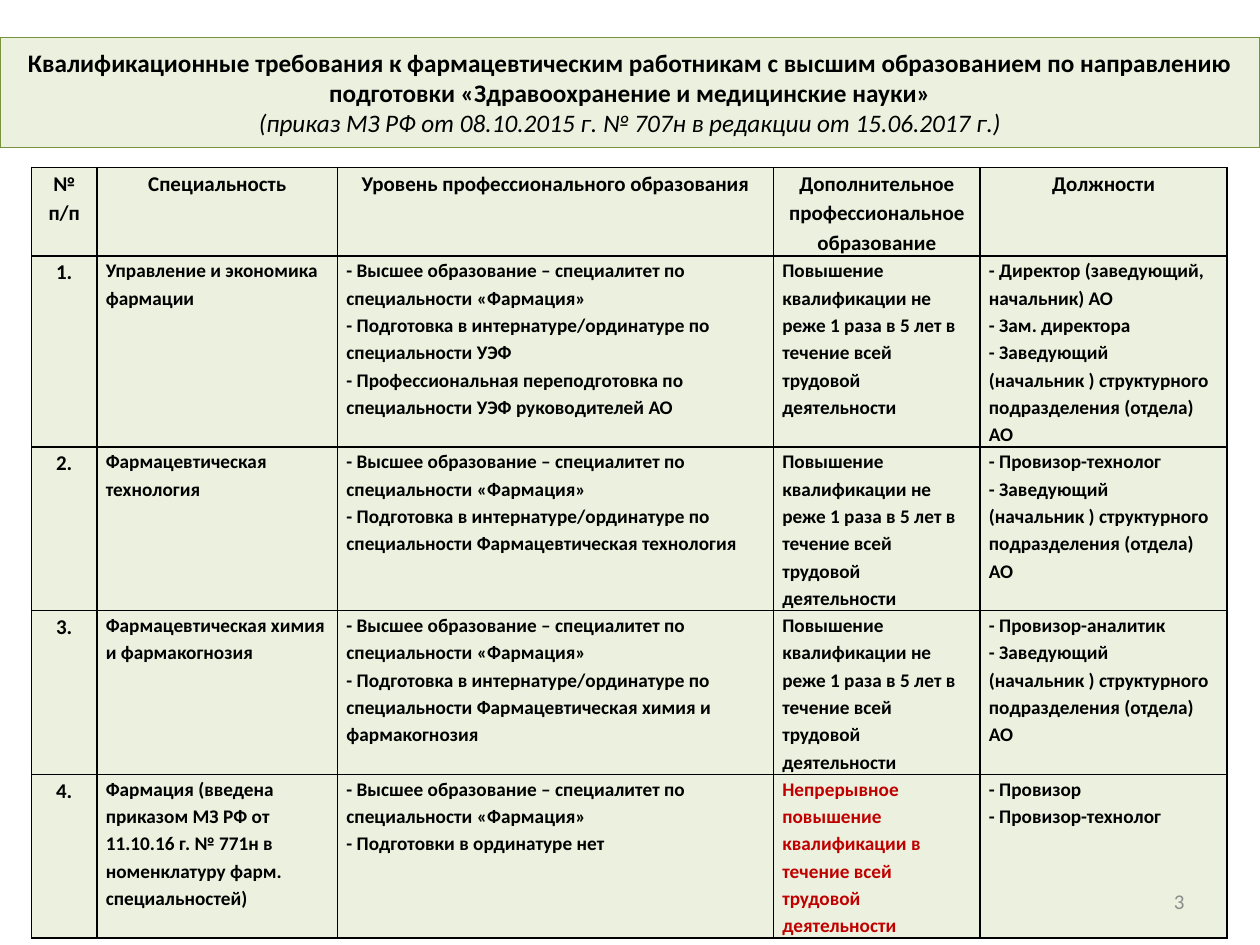
from dataclasses import dataclass

from lxml.etree import SubElement
from pptx import Presentation
from pptx.dml.color import RGBColor
from pptx.enum.shapes import MSO_SHAPE
from pptx.enum.text import MSO_ANCHOR, PP_ALIGN
from pptx.oxml.ns import qn
from pptx.util import Inches, Pt


@dataclass(frozen=True)
class Theme:
    font: str = "Calibri"
    panel: RGBColor = RGBColor(0xEB, 0xF1, 0xDE)
    outline: RGBColor = RGBColor(0x77, 0x93, 0x3C)
    text: RGBColor = RGBColor(0, 0, 0)
    accent: RGBColor = RGBColor(0xC0, 0, 0)
    muted: RGBColor = RGBColor(0x8C, 0x8C, 0x8C)
    title_size: float = 14.4
    header_size: float = 12
    body_size: float = 11


theme = Theme()


def add_run(paragraph, text, size, color=theme.text, bold=True, italic=False):
    run = paragraph.add_run()
    run.text = text
    run.font.name = theme.font
    run.font.size = Pt(size)
    run.font.color.rgb = color
    run.font.bold = bold
    run.font.italic = italic


def add_borders(cell):
    properties = cell._tc.get_or_add_tcPr()
    for position, side in enumerate(("lnL", "lnR", "lnT", "lnB")):
        line = properties.makeelement(qn(f"a:{side}"), {"w": str(Pt(1))})
        fill = SubElement(line, qn("a:solidFill"))
        SubElement(fill, qn("a:srgbClr"), val=str(theme.text))
        properties.insert(position, line)


presentation = Presentation()
presentation.slide_width = Inches(10)
presentation.slide_height = Inches(7.5)
slide = presentation.slides.add_slide(presentation.slide_layouts[6])

# Title band
title = slide.shapes.add_shape(
    MSO_SHAPE.RECTANGLE, Inches(0), Inches(0.3), Inches(10), Inches(0.87))
title.shadow.inherit = False
title.fill.solid()
title.fill.fore_color.rgb = theme.panel
title.line.color.rgb = theme.outline
title.line.width = Pt(0.75)
title.text_frame.word_wrap = True
title.text_frame.vertical_anchor = MSO_ANCHOR.MIDDLE
paragraph = title.text_frame.paragraphs[0]
paragraph.alignment = PP_ALIGN.CENTER
add_run(paragraph, "Квалификационные требования к фармацевтическим работникам с высшим "
        "образованием по направлению подготовки «Здравоохранение и медицинские науки»",
        theme.title_size)
paragraph.add_line_break()
add_run(paragraph, "(приказ МЗ РФ от 08.10.2015 г. № 707н в редакции от 15.06.2017 г.)",
        theme.title_size, bold=False, italic=True)

# Table content: one list of paragraphs per cell
degree = "- Высшее образование – специалитет по специальности «Фармация»"
internship = "- Подготовка в интернатуре/ординатуре по специальности "
training = ["Повышение квалификации не реже 1 раза в 5 лет в течение всей трудовой деятельности"]
unit_head = "- Заведующий (начальник ) структурного подразделения (отдела) АО"
rows = [
    [["№ п/п"], ["Специальность"], ["Уровень профессионального образования"],
     ["Дополнительное профессиональное образование"], ["Должности"]],
    [["1."], ["Управление и экономика фармации"],
     [degree, internship + "УЭФ",
      "- Профессиональная переподготовка по специальности УЭФ руководителей АО"],
     training,
     ["- Директор (заведующий, начальник) АО", "- Зам. директора", unit_head]],
    [["2."], ["Фармацевтическая технология"],
     [degree, internship + "Фармацевтическая технология"],
     training, ["- Провизор-технолог", unit_head]],
    [["3."], ["Фармацевтическая химия и фармакогнозия"],
     [degree, internship + "Фармацевтическая химия и фармакогнозия"],
     training, ["- Провизор-аналитик", unit_head]],
    [["4."], ["Фармация (введена приказом МЗ РФ от 11.10.16 г. № 771н в номенклатуру "
              "фарм. специальностей)"],
     [degree, "- Подготовки в ординатуре нет"],
     ["Непрерывное повышение квалификации в течение всей трудовой деятельности"],
     ["- Провизор", "- Провизор-технолог"]],
]
column_widths = [0.52, 1.91, 3.46, 1.64, 1.96]
row_heights = [0.64, 1.28, 1.06, 1.06, 1.06]
highlighted_cell = (4, 3)

# Requirements table
table = slide.shapes.add_table(
    len(rows), len(column_widths), Inches(0.25), Inches(1.33),
    Inches(sum(column_widths)), Inches(sum(row_heights))).table
for column, width in zip(table.columns, column_widths):
    column.width = Inches(width)
for row, height in zip(table.rows, row_heights):
    row.height = Inches(height)

for row_index, row in enumerate(rows):
    for column_index, lines in enumerate(row):
        cell = table.cell(row_index, column_index)
        cell.fill.solid()
        cell.fill.fore_color.rgb = theme.panel
        add_borders(cell)
        cell.margin_left = cell.margin_right = Inches(0.07)
        cell.margin_top = cell.margin_bottom = Inches(0)
        is_heading = row_index == 0 or column_index == 0
        is_highlighted = (row_index, column_index) == highlighted_cell
        for line_index, line in enumerate(lines):
            frame = cell.text_frame
            paragraph = frame.add_paragraph() if line_index else frame.paragraphs[0]
            paragraph.alignment = PP_ALIGN.CENTER if is_heading else PP_ALIGN.LEFT
            paragraph.line_spacing = 1.15
            add_run(paragraph, line,
                    theme.header_size if is_heading else theme.body_size,
                    theme.accent if is_highlighted else theme.text)

# Slide number
number = slide.shapes.add_textbox(Inches(7.17), Inches(6.95), Inches(2.33), Inches(0.4))
number.text_frame.word_wrap = True
number.text_frame.vertical_anchor = MSO_ANCHOR.MIDDLE
paragraph = number.text_frame.paragraphs[0]
paragraph.alignment = PP_ALIGN.RIGHT
add_run(paragraph, "3", theme.header_size, theme.muted, bold=False)

presentation.save("out.pptx")
